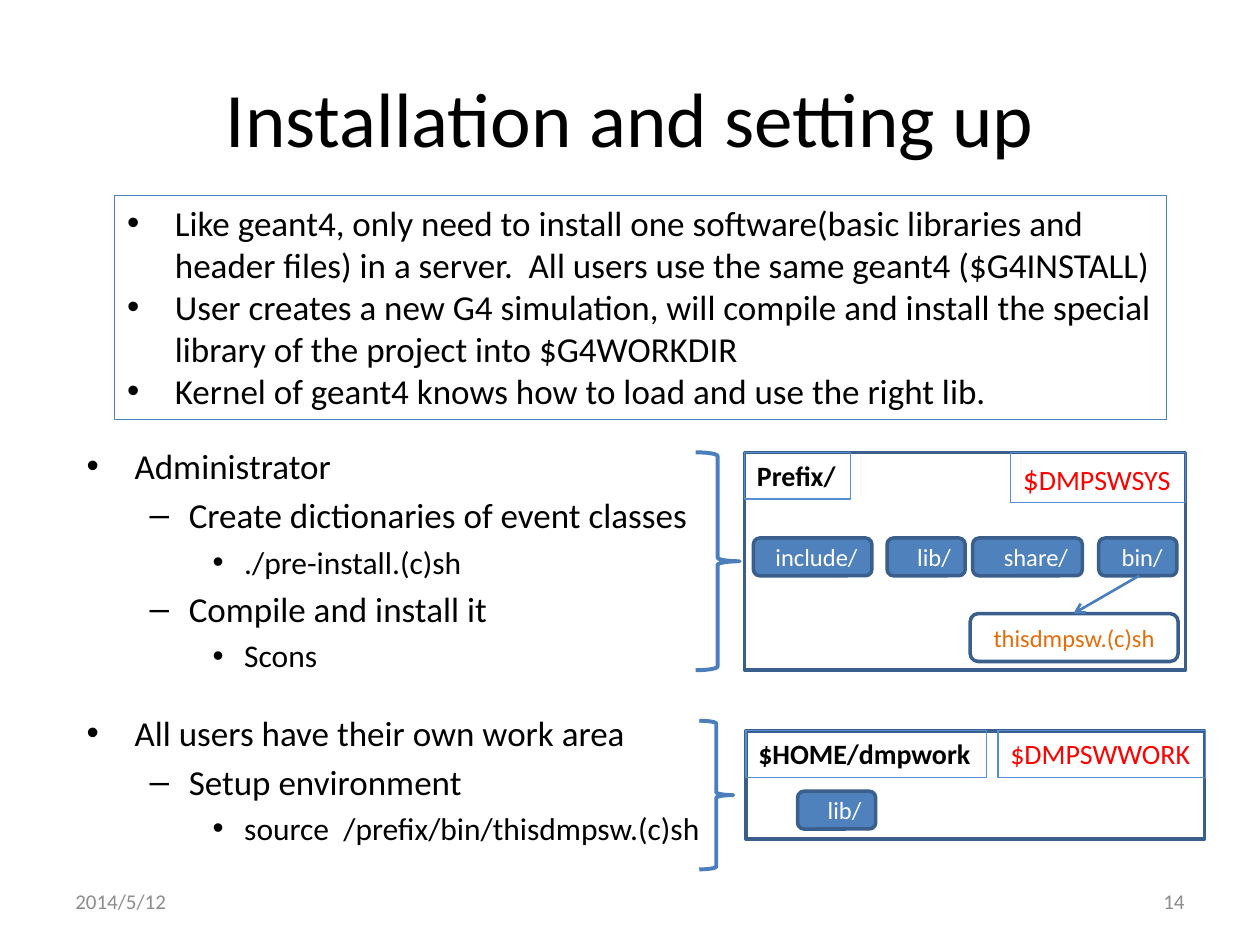
from pptx import Presentation
from pptx.dml.color import RGBColor
from pptx.enum.shapes import MSO_CONNECTOR as Link, MSO_SHAPE as Kind
from pptx.enum.text import MSO_ANCHOR as Anchor, PP_ALIGN as Align
from pptx.oxml.ns import qn
from pptx.util import Inches, Pt
from lxml.etree import SubElement

BLACK = RGBColor(0x00, 0x00, 0x00)
WHITE = RGBColor(0xFF, 0xFF, 0xFF)
GRAY = RGBColor(0x8C, 0x8C, 0x8C)
RED = RGBColor(0xFF, 0x00, 0x00)
ORANGE = RGBColor(0xE4, 0x6C, 0x0A)
BLUE = RGBColor(0x4F, 0x81, 0xBD)
NAVY = RGBColor(0x3A, 0x5F, 0x8C)
SKY = RGBColor(0x55, 0x8E, 0xD5)
STEEL = RGBColor(0x4B, 0x7E, 0xBC)

FACTS = [
    "Like geant4, only need to install one software(basic libraries and "
    "header files) in a server.  All users use the same geant4 ($G4INSTALL)",
    "User creates a new G4 simulation, will compile and install the special "
    "library of the project into $G4WORKDIR",
    "Kernel of geant4 knows how to load and use the right lib.",
]
STEPS = [
    (0, "Administrator", 0),
    (1, "Create dictionaries of event classes", 4),
    (2, "./pre-install.(c)sh", 4),
    (1, "Compile and install it", 4),
    (2, "Scons", 4),
    (0, "All users have their own work area", 21),
    (1, "Setup environment", 4),
    (2, "source  /prefix/bin/thisdmpsw.(c)sh", 4),
]
LEVELS = [(0.38, 0.38, "•", 20), (0.81, 0.31, "–", 20), (1.25, 0.25, "•", 18)]
DIRS = [
    ("include/", 5.98, 4.27, 0.94),
    ("lib/", 7.04, 4.27, 0.62),
    ("share/", 7.72, 4.27, 0.87),
    ("bin/", 8.72, 4.27, 0.62),
    ("lib/", 6.33, 6.28, 0.62),
]


def add_run(para, text, size, color, bold=False):
    run = para.add_run()
    run.text = text
    font = run.font
    font.name = "Calibri"
    font.size = Pt(size)
    font.bold = bold
    font.color.rgb = color


def add_shape(slide, kind, box, line, width, fill=None):
    shape = slide.shapes.add_shape(kind, *map(Inches, box))
    shape.shadow.inherit = False
    if fill is None:
        shape.fill.background()
    else:
        shape.fill.solid()
        shape.fill.fore_color.rgb = fill
    shape.line.color.rgb = line
    shape.line.width = Pt(width)
    return shape


def add_label(slide, box, runs, bold=False):
    frame = add_shape(slide, Kind.RECTANGLE, box, SKY, 0.75).text_frame
    frame.word_wrap = False
    frame.vertical_anchor = Anchor.TOP
    para = frame.paragraphs[0]
    para.alignment = Align.LEFT
    for text, size, color in runs:
        add_run(para, text, size, color, bold)


def add_pill(slide, box, text, color, align, fill=None):
    frame = add_shape(slide, Kind.ROUNDED_RECTANGLE, box, NAVY, 2, fill).text_frame
    frame.vertical_anchor = Anchor.MIDDLE
    para = frame.paragraphs[0]
    para.alignment = align
    add_run(para, text, 14, color)


def add_list(frame, items):
    frame.word_wrap = True
    frame.vertical_anchor = Anchor.TOP
    for i, (level, text, gap) in enumerate(items):
        para = frame.paragraphs[0] if i == 0 else frame.add_paragraph()
        left, hang, mark, size = LEVELS[level]
        para.level = level
        para.alignment = Align.LEFT
        para.space_before = Pt(gap)
        props = para._p.get_or_add_pPr()
        props.set("marL", str(Inches(left)))
        props.set("indent", str(-Inches(hang)))
        SubElement(props, qn("a:buFont")).set("typeface", "Arial")
        SubElement(props, qn("a:buChar")).set("char", mark)
        add_run(para, text, size, BLACK)


def add_note(slide, left, text, align):
    box = slide.shapes.add_textbox(*map(Inches, (left, 6.95, 2.33, 0.4)))
    frame = box.text_frame
    frame.word_wrap = True
    frame.vertical_anchor = Anchor.MIDDLE
    para = frame.paragraphs[0]
    para.alignment = align
    add_run(para, text, 12, GRAY)


def add_arrow(slide, start, end):
    link = slide.shapes.add_connector(
        Link.STRAIGHT, *map(Inches, start + end))
    link.line.color.rgb = STEEL
    link.line.width = Pt(1.5)
    SubElement(link.line._get_or_add_ln(), qn("a:tailEnd")).set("type", "arrow")
    SubElement(link._element.spPr, qn("a:effectLst"))


def add_title(slide, text):
    title = slide.shapes.title
    title.left, title.top, title.width, title.height = map(
        Inches, (0.5, 0.3, 9, 1.25))
    title.text_frame.vertical_anchor = Anchor.MIDDLE
    para = title.text_frame.paragraphs[0]
    para.alignment = Align.CENTER
    add_run(para, text, 44, BLACK)


def main():
    deck = Presentation()
    deck.slide_width, deck.slide_height = Inches(10), Inches(7.5)
    slide = deck.slides.add_slide(deck.slide_layouts[5])
    add_title(slide, "Installation and setting up")

    steps = slide.shapes.add_textbox(*map(Inches, (0.59, 3.48, 9.3, 3.34)))
    add_list(steps.text_frame, STEPS)
    add_note(slide, 0.5, "2014/5/12", Align.LEFT)
    add_note(slide, 7.17, "14", Align.RIGHT)

    facts = add_shape(
        slide, Kind.RECTANGLE, (0.91, 1.55, 8.35, 1.78), BLUE, 0.75)
    add_list(facts.text_frame, [(0, text, 0) for text in FACTS])

    for box in [(5.91, 3.59, 3.5, 1.73), (5.92, 5.8, 3.64, 0.86)]:
        add_shape(slide, Kind.RECTANGLE, box, NAVY, 2)
    for box in [(5.52, 3.59, 0.35, 1.73), (5.55, 5.72, 0.27, 1.18)]:
        add_shape(slide, Kind.RIGHT_BRACE, box, STEEL, 2.25)

    add_label(slide, (5.91, 3.59, 0.84, 0.37), [("Prefix/", 16, BLACK)], True)
    add_label(slide, (8.02, 3.59, 1.39, 0.4),
              [("$", 18, RED), ("DMPSWSYS", 16, RED)])
    add_label(slide, (5.92, 5.8, 1.91, 0.37),
              [("$HOME/dmpwork", 16, BLACK)], True)
    add_label(slide, (7.92, 5.8, 1.65, 0.37), [("$DMPSWWORK", 16, RED)])

    for text, left, top, width in DIRS:
        add_pill(slide, (left, top, width, 0.3), text, WHITE, Align.RIGHT, BLUE)
    add_pill(slide, (7.7, 4.87, 1.65, 0.38), "thisdmpsw.(c)sh",
             ORANGE, Align.CENTER)
    add_arrow(slide, (9.04, 4.57), (8.52, 4.87))

    deck.save("out.pptx")


if __name__ == "__main__":
    main()
